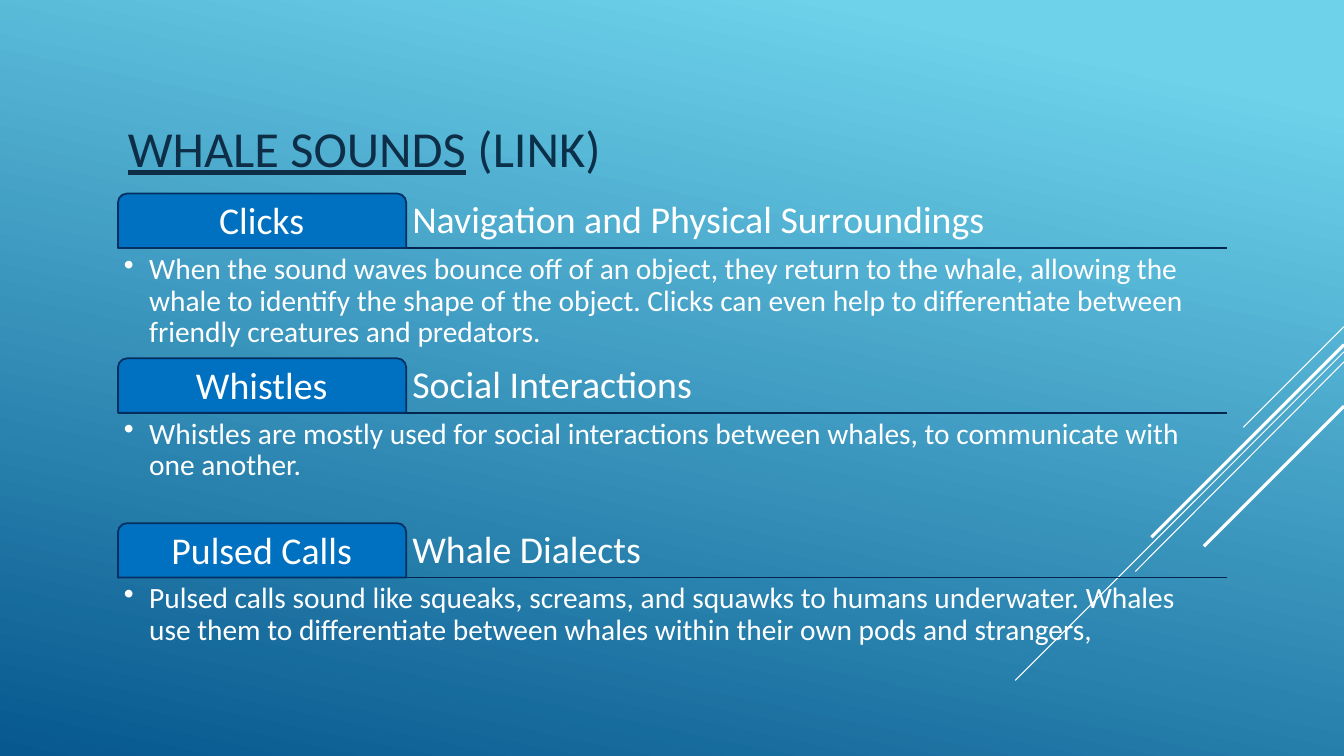
"""Build the whale sounds slide: three tabbed sections over a blue gradient."""
from dataclasses import dataclass

import lxml.etree
import pptx
import pptx.dml.color
import pptx.enum.shapes
import pptx.enum.text
import pptx.oxml.ns
import pptx.shapes.autoshape
import pptx.slide
import pptx.text.text
import pptx.util

Inches = pptx.util.Inches
Anchor = pptx.enum.text.MSO_ANCHOR
Align = pptx.enum.text.PP_ALIGN

COLORS = {
    "sky": "6ED2EB",
    "deep": "06588E",
    "white": "FFFFFF",
    "title_link": "0D2E46",
    "title": "0A304A",
    "rule": "04264E",
    "tab": "0070C0",
    "tab_edge": "052F61",
}
FONT = "Calibri"
LEFT, WIDTH = 1.17, 11
TAB_WIDTH, TAB_HEIGHT = 2.86, 0.54
BODY_HEIGHT = 1.07
FIRST_TOP, ROW_PITCH = 1.92, 1.635
PADDING = 0.06
BULLET_INDENT = 0.25
SLIDE_WIDTH, SLIDE_HEIGHT = 13.33, 7.5


@dataclass(frozen=True)
class Section:
    name: str
    heading: str
    detail: str


@dataclass(frozen=True)
class Streak:
    top: float
    left: float
    bottom: float
    weight: float


SECTIONS = [
    Section(
        "Clicks",
        "Navigation and Physical Surroundings",
        "When the sound waves bounce off of an object, they return to the whale, "
        "allowing the whale to identify the shape of the object. Clicks can even "
        "help to differentiate between friendly creatures and predators.",
    ),
    Section(
        "Whistles",
        "Social Interactions",
        "Whistles are mostly used for social interactions between whales, "
        "to communicate with one another.",
    ),
    Section(
        "Pulsed Calls",
        "Whale Dialects",
        "Pulsed calls sound like squeaks, screams, and squawks to humans underwater. "
        "Whales use them to differentiate between whales within their own pods "
        "and strangers,",
    ),
]
STREAKS = [
    Streak(3.24, 12.33, 4.24, 0.75),
    Streak(3.49, 10.07, 6.75, 0.75),
    Streak(3.59, 11.26, 5.67, 0.75),
    Streak(3.42, 11.42, 5.33, 2.25),
    Streak(4.03, 11.94, 5.42, 2.25),
]


def rgb(name: str) -> pptx.dml.color.RGBColor:
    return pptx.dml.color.RGBColor.from_string(COLORS[name])


def paint_background(page: pptx.slide.Slide) -> None:
    fill = page.background.fill
    fill.gradient()
    fill.gradient_angle = 258
    for stop, (position, color) in zip(fill.gradient_stops, [(0.1, "sky"), (1, "deep")]):
        stop.position = position
        stop.color.rgb = rgb(color)


def add_line(page: pptx.slide.Slide, start: tuple[float, float],
             end: tuple[float, float], color: str, weight: float) -> None:
    line = page.shapes.add_connector(
        pptx.enum.shapes.MSO_CONNECTOR.STRAIGHT, *map(Inches, start + end))
    line.line.color.rgb = rgb(color)
    line.line.width = pptx.util.Pt(weight)
    properties = line._element.spPr
    lxml.etree.SubElement(properties, pptx.oxml.ns.qn("a:effectLst"))


def add_span(para: pptx.text.text._Paragraph, text: str, size: float,
             color: str, underline: bool = False) -> None:
    span = para.add_run()
    span.text = text
    span.font.name = FONT
    span.font.size = pptx.util.Pt(size)
    span.font.color.rgb = rgb(color)
    span.font.underline = underline


def add_box(page: pptx.slide.Slide, left: float, top: float, width: float,
            height: float, anchor: Anchor,
            padding: float = PADDING) -> pptx.text.text._Paragraph:
    box = page.shapes.add_textbox(*map(Inches, (left, top, width, height)))
    frame = box.text_frame
    frame.word_wrap = True
    frame.vertical_anchor = anchor
    frame.margin_left = frame.margin_right = Inches(padding)
    frame.margin_top = frame.margin_bottom = Inches(PADDING)
    para = frame.paragraphs[0]
    para.line_spacing = 0.9
    return para


def add_bullet(para: pptx.text.text._Paragraph) -> None:
    properties = para._p.get_or_add_pPr()
    properties.set("marL", str(Inches(BULLET_INDENT)))
    properties.set("indent", str(-Inches(BULLET_INDENT)))
    bullet = lxml.etree.SubElement(properties, pptx.oxml.ns.qn("a:buChar"))
    bullet.set("char", "•")


def add_tab(page: pptx.slide.Slide, top: float) -> None:
    tab = page.shapes.add_shape(
        pptx.enum.shapes.MSO_SHAPE.ROUND_2_SAME_RECTANGLE,
        *map(Inches, (LEFT, top, TAB_WIDTH, TAB_HEIGHT)))
    tab.adjustments[0] = 0.167
    tab.adjustments[1] = 0
    tab.shadow.inherit = False
    tab.fill.solid()
    tab.fill.fore_color.rgb = rgb("tab")
    tab.line.color.rgb = rgb("tab_edge")
    tab.line.width = pptx.util.Pt(1.25)


def add_section(page: pptx.slide.Slide, section: Section, top: float) -> None:
    base = top + TAB_HEIGHT
    add_line(page, (LEFT, base), (LEFT + WIDTH, base), "rule", 1.25)
    heading = add_box(page, LEFT + TAB_WIDTH, top, WIDTH - TAB_WIDTH, TAB_HEIGHT,
                      Anchor.BOTTOM)
    add_span(heading, section.heading, 27, "white")
    add_tab(page, top)
    name = add_box(page, LEFT + 0.02, top + 0.03, TAB_WIDTH - 0.05, TAB_HEIGHT - 0.03,
                   Anchor.MIDDLE)
    name.alignment = Align.CENTER
    add_span(name, section.name, 27, "white")
    detail = add_box(page, LEFT, base, WIDTH, BODY_HEIGHT, Anchor.TOP)
    add_bullet(detail)
    add_span(detail, section.detail, 21, "white")


def main() -> None:
    deck = pptx.Presentation()
    deck.slide_width = Inches(SLIDE_WIDTH)
    deck.slide_height = Inches(SLIDE_HEIGHT)
    page = deck.slides.add_slide(deck.slide_layouts[6])
    paint_background(page)
    for streak in STREAKS:
        add_line(page, (SLIDE_WIDTH, streak.top), (streak.left, streak.bottom),
                 "white", streak.weight)
    title = add_box(page, LEFT, 0.75, WIDTH, 1.5, Anchor.MIDDLE, 0.1)
    add_span(title, "WHALE SOUNDS", 36, "title_link", underline=True)
    add_span(title, " (LINK)", 36, "title")
    for index, section in enumerate(SECTIONS):
        add_section(page, section, FIRST_TOP + index * ROW_PITCH)
    deck.save("out.pptx")


if __name__ == "__main__":
    main()
